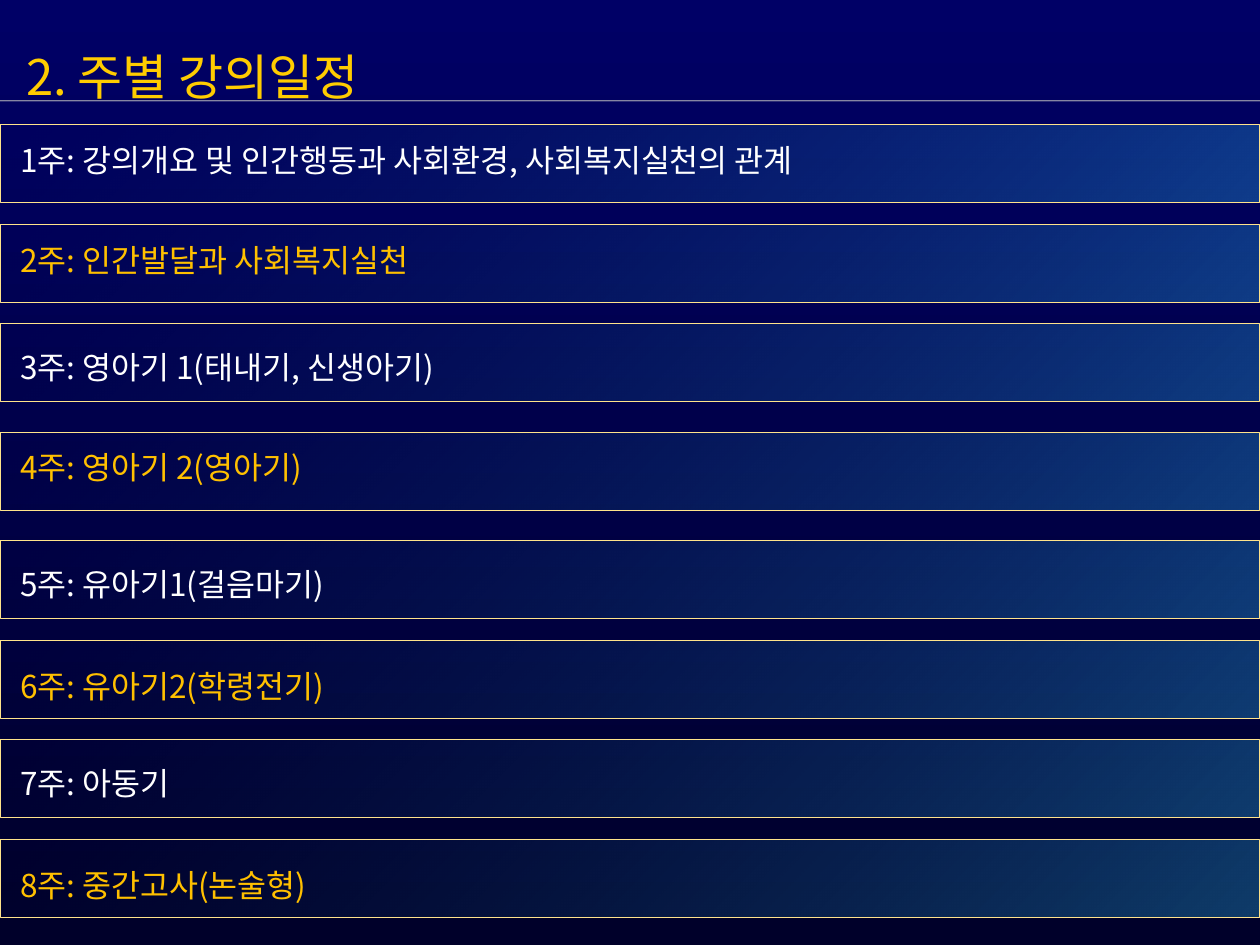
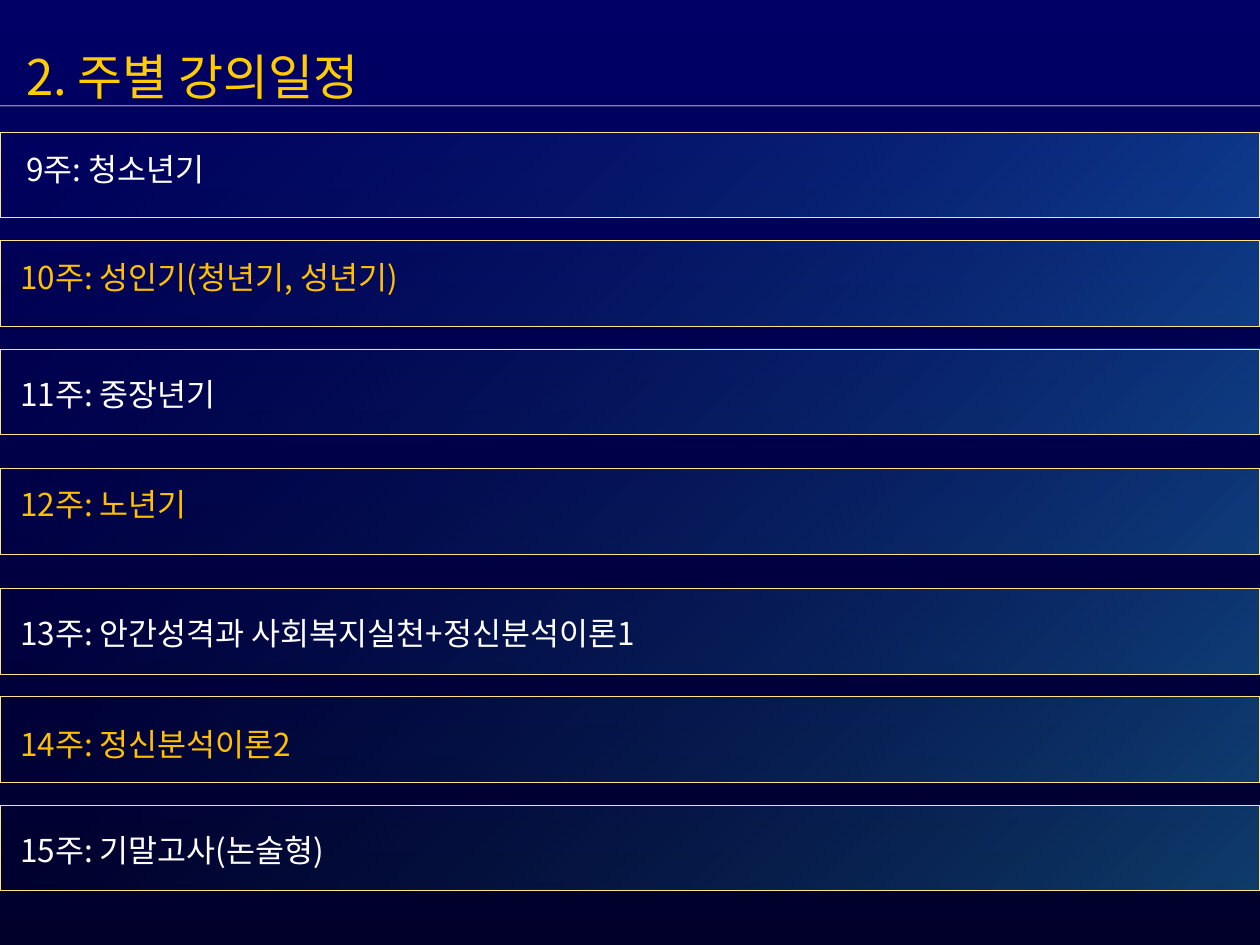
from lxml.etree import SubElement
from pptx import Presentation
from pptx.dml.color import RGBColor
from pptx.enum.shapes import MSO_CONNECTOR, MSO_SHAPE
from pptx.enum.text import MSO_ANCHOR
from pptx.oxml.ns import qn
from pptx.util import Inches, Pt

# Colours and font
NIGHT_TOP = RGBColor(0x00, 0x00, 0x66)
NIGHT_BOTTOM = RGBColor(0x00, 0x00, 0x2A)
BAND_LEFT = RGBColor(0x18, 0x5E, 0x76)
BAND_RIGHT = RGBColor(0x33, 0xCC, 0xFF)
BAND_EDGE = RGBColor(0xFF, 0xE3, 0x8B)
RULE_GREY = RGBColor(0xC0, 0xC0, 0xC0)
TITLE_YELLOW = RGBColor(0xFF, 0xCC, 0x00)
WHITE = RGBColor(0xFF, 0xFF, 0xFF)
GOLD = RGBColor(0xFF, 0xC0, 0x00)
FONT = "Noto Sans CJK KR"

# Grid of 100 columns by 75 rows
COLUMNS, ROWS = 100, 75
WIDTH, HEIGHT = Inches(10), Inches(7.5)

TITLE = "2. 주별 강의일정"
# Top of each week's text, as a share of the band height
TEXT_DROPS = (0.13, 0.13, 0.23, 0.12, 0.23, 0.26, 0.23, 0.26)
# Bands that stand a little further from the band above
WIDER_GAPS = (3, 4)

SCHEDULES = (
    dict(rule_row=8, first_row=9.9, band_rows=6.2, step=7.9, extra_gap=0.7, weeks=(
        "1주: 강의개요 및 인간행동과 사회환경, 사회복지실천의 관계",
        "2주: 인간발달과 사회복지실천",
        "3주: 영아기 1(태내기, 신생아기)",
        "4주: 영아기 2(영아기)",
        "5주: 유아기1(걸음마기)",
        "6주: 유아기2(학령전기)",
        "7주: 아동기",
        "8주: 중간고사(논술형)",
    )),
    dict(rule_row=8.4, first_row=10.5, band_rows=6.8, step=8.6, extra_gap=0.9, weeks=(
        "9주: 청소년기",
        "10주: 성인기(청년기, 성년기)",
        "11주: 중장년기",
        "12주: 노년기",
        "13주: 안간성격과 사회복지실천+정신분석이론1",
        "14주: 정신분석이론2",
        "15주: 기말고사(논술형)",
    )),
)


def write_text(frame, text, *, size, color, wrap=True, indent=0.1):
    frame.word_wrap = wrap
    frame.vertical_anchor = MSO_ANCHOR.TOP
    frame.margin_left = Inches(indent)
    run = frame.paragraphs[0].add_run()
    run.text = text
    run.font.size = Pt(size)
    run.font.color.rgb = color
    run.font.name = FONT
    SubElement(run.font._element, qn("a:ea")).set("typeface", FONT)


def set_gradient(fill, colors, angle):
    fill.gradient()
    fill.gradient_angle = angle
    for stop, color in zip(fill.gradient_stops, colors):
        stop.color.rgb = color


def set_opacity(element, *percents):
    for color, percent in zip(element.iter(qn("a:srgbClr")), percents):
        SubElement(color, qn("a:alpha")).set("val", str(percent * 1000))


class ScheduleDeck:
    def __init__(self):
        self.presentation = Presentation()
        self.presentation.slide_width = WIDTH
        self.presentation.slide_height = HEIGHT
        self.slide = None

    def place(self, column, row):
        return int(WIDTH * column / COLUMNS), int(HEIGHT * row / ROWS)

    def new_slide(self):
        self.slide = self.presentation.slides.add_slide(self.presentation.slide_layouts[6])
        set_gradient(self.slide.background.fill, (NIGHT_TOP, NIGHT_BOTTOM), 270)

    def rule(self, row):
        line = self.slide.shapes.add_connector(
            MSO_CONNECTOR.STRAIGHT, *self.place(0, row), *self.place(COLUMNS, row))
        line.line.color.rgb = RULE_GREY
        line.line.width = Pt(0.75)
        set_opacity(line._element, 70)
        SubElement(line._element.spPr, qn("a:effectLst"))

    def text(self, column, row, columns, rows, text, **text_format):
        box = self.slide.shapes.add_textbox(
            *self.place(column, row), *self.place(columns, rows))
        write_text(box.text_frame, text, **text_format)

    def band(self, row, rows):
        shape = self.slide.shapes.add_shape(
            MSO_SHAPE.RECTANGLE, *self.place(0, row), *self.place(COLUMNS, rows))
        shape.shadow.inherit = False
        set_gradient(shape.fill, (BAND_LEFT, BAND_RIGHT), 315)
        set_opacity(shape._element, 0, 30)
        shape.line.color.rgb = BAND_EDGE
        shape.line.width = Pt(0.5)

    def schedule(self, rule_row, first_row, band_rows, step, extra_gap, weeks):
        self.new_slide()
        # Title and rule
        self.rule(rule_row)
        self.text(1.1, 3.2, 31.3, 5.7, TITLE, size=28, color=TITLE_YELLOW, wrap=False)
        # One band per week, text in alternating colours
        row = first_row
        for index, (week, drop) in enumerate(zip(weeks, TEXT_DROPS)):
            if index in WIDER_GAPS:
                row += extra_gap
            self.band(row, band_rows)
            self.text(0, row + drop * band_rows, COLUMNS, 4, week, size=18,
                      color=GOLD if index % 2 else WHITE,
                      indent=0.21 if week.startswith("9") else 0.16)
            row += step


def main():
    deck = ScheduleDeck()
    for schedule in SCHEDULES:
        deck.schedule(**schedule)
    deck.presentation.save("out.pptx")


if __name__ == "__main__":
    main()
